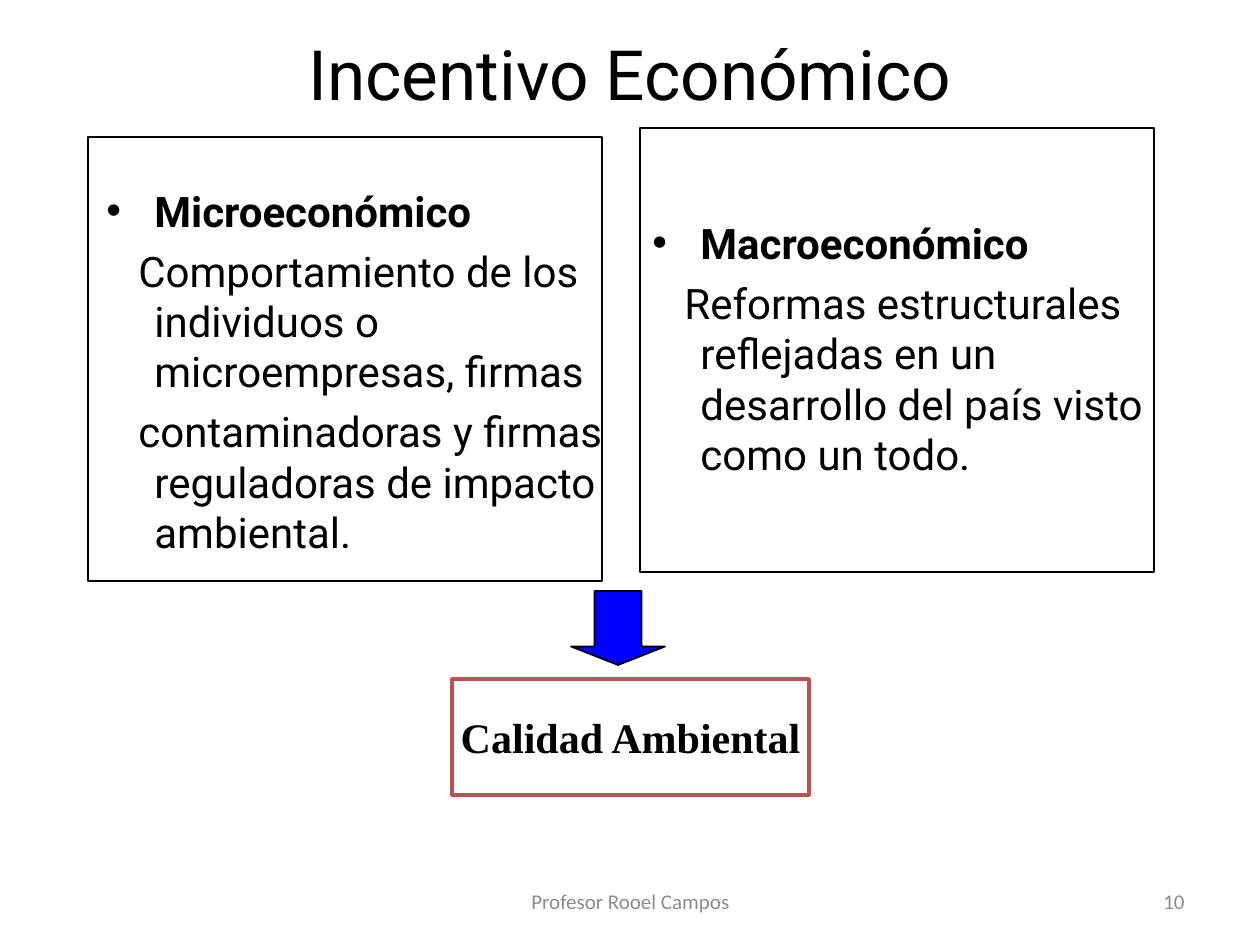
from lxml import etree
from pptx import Presentation, util as u
from pptx.dml.color import RGBColor
from pptx.enum import shapes, text

PX = 914400 / 126
COLORS = {"ink": "000000", "paper": "FFFFFF", "edge": "C0504D",
          "arrow": "0000FF", "footer": "8C8C8C"}
CENTER, RIGHT, LEFT = text.PP_ALIGN.CENTER, text.PP_ALIGN.RIGHT, text.PP_ALIGN.LEFT


def px(value):
    return u.Emu(round(value * PX))


def color(name):
    return RGBColor.from_string(COLORS[name])


def add_span(para, words, size, font, ink="ink", bold=False):
    span = para.add_run()
    span.text = words
    span.font.size = u.Pt(size)
    span.font.name = font
    span.font.bold = bold
    span.font.color.rgb = color(ink)


def add_label(page, box, words, size, font, ink="ink", align=CENTER):
    frame = page.shapes.add_textbox(*map(px, box)).text_frame
    frame.word_wrap = True
    frame.vertical_anchor = text.MSO_ANCHOR.MIDDLE
    para = frame.paragraphs[0]
    para.alignment = align
    add_span(para, words, size, font, ink)


def add_block(page, kind, box, fill, line, width):
    block = page.shapes.add_shape(kind, *map(px, box))
    block.shadow.inherit = False
    if fill:
        block.fill.solid()
        block.fill.fore_color.rgb = color(fill)
    else:
        block.fill.background()
    block.line.color.rgb = color(line)
    block.line.width = u.Pt(width)
    return block


def set_indent(para, first, bullet=False):
    """Hang the paragraph at 48 px, with its first line or bullet at `first`."""
    props = para._p.get_or_add_pPr()
    props.set("marL", str(px(48)))
    props.set("indent", str(px(first - 48)))
    namespace = props.nsmap["a"]
    if bullet:
        font = etree.SubElement(props, f"{{{namespace}}}buFont")
        font.set("typeface", "Arial")
        etree.SubElement(props, f"{{{namespace}}}buChar").set("char", "•")
    else:
        etree.SubElement(props, f"{{{namespace}}}buNone")


def add_topic(page, box, inset, heading, details):
    """A framed topic; inset is where its text starts inside the frame."""
    left, top, width, height = box
    dx, dy = inset
    text_box = (left + dx, top + dy, 525, height - dy)
    frame = page.shapes.add_textbox(*map(px, text_box)).text_frame
    frame.word_wrap = True
    for index, words in enumerate([heading, *details]):
        is_heading = index == 0
        para = frame.paragraphs[0] if is_heading else frame.add_paragraph()
        para.alignment = LEFT
        para.space_before = u.Pt(5.5)
        set_indent(para, 0 if is_heading else 32, bullet=is_heading)
        add_span(para, words, 24, "Roboto", bold=is_heading)
    add_block(page, shapes.MSO_SHAPE.RECTANGLE, box, None, "ink", 1)


def add_outcome(page, box):
    """An arrow pointing down at the outcome."""
    left, top, width, height = box
    result = add_block(page, shapes.MSO_SHAPE.RECTANGLE,
                       (left, top + 88, width, height - 88), "paper", "edge", 2)
    frame = result.text_frame
    frame.word_wrap = False
    frame.vertical_anchor = text.MSO_ANCHOR.MIDDLE
    para = frame.paragraphs[0]
    para.alignment = CENTER
    add_span(para, "Calidad Ambiental", 24, "Times New Roman", bold=True)
    arrow = add_block(page, shapes.MSO_SHAPE.DOWN_ARROW,
                      (left + 119, top, 94, 74), "arrow", "ink", 1)
    arrow.adjustments[0] = 0.5
    arrow.adjustments[1] = 0.25


def add_footer(page, box):
    left, top, width, height = box
    add_label(page, (left, top, 399, height), "Profesor Rooel Campos",
              12, "Calibri", "footer")
    add_label(page, (left + width - 294, top, 294, height), "10",
              12, "Calibri", "footer", RIGHT)


def main():
    deck = Presentation()
    deck.slide_width, deck.slide_height = px(1260), px(945)
    page = deck.slides.add_slide(deck.slide_layouts[6])

    # Title
    add_label(page, (63, 38, 1134, 70), "Incentivo Económico", 39.6, "Roboto")
    # Two topics side by side
    add_topic(page, (88, 137, 514, 444), (6, 42), "Microeconómico", [
        "Comportamiento de los individuos o microempresas, firmas",
        "contaminadoras y firmas reguladoras de impacto ambiental."])
    add_topic(page, (640, 128, 514, 444), (0, 83), "Macroeconómico", [
        "Reformas estructurales reflejadas en un desarrollo del país visto "
        "como un todo."])
    # Shared outcome
    add_outcome(page, (452, 591, 357, 204))
    # Footer
    add_footer(page, (431, 876, 766, 50))

    deck.save("out.pptx")


if __name__ == "__main__":
    main()
